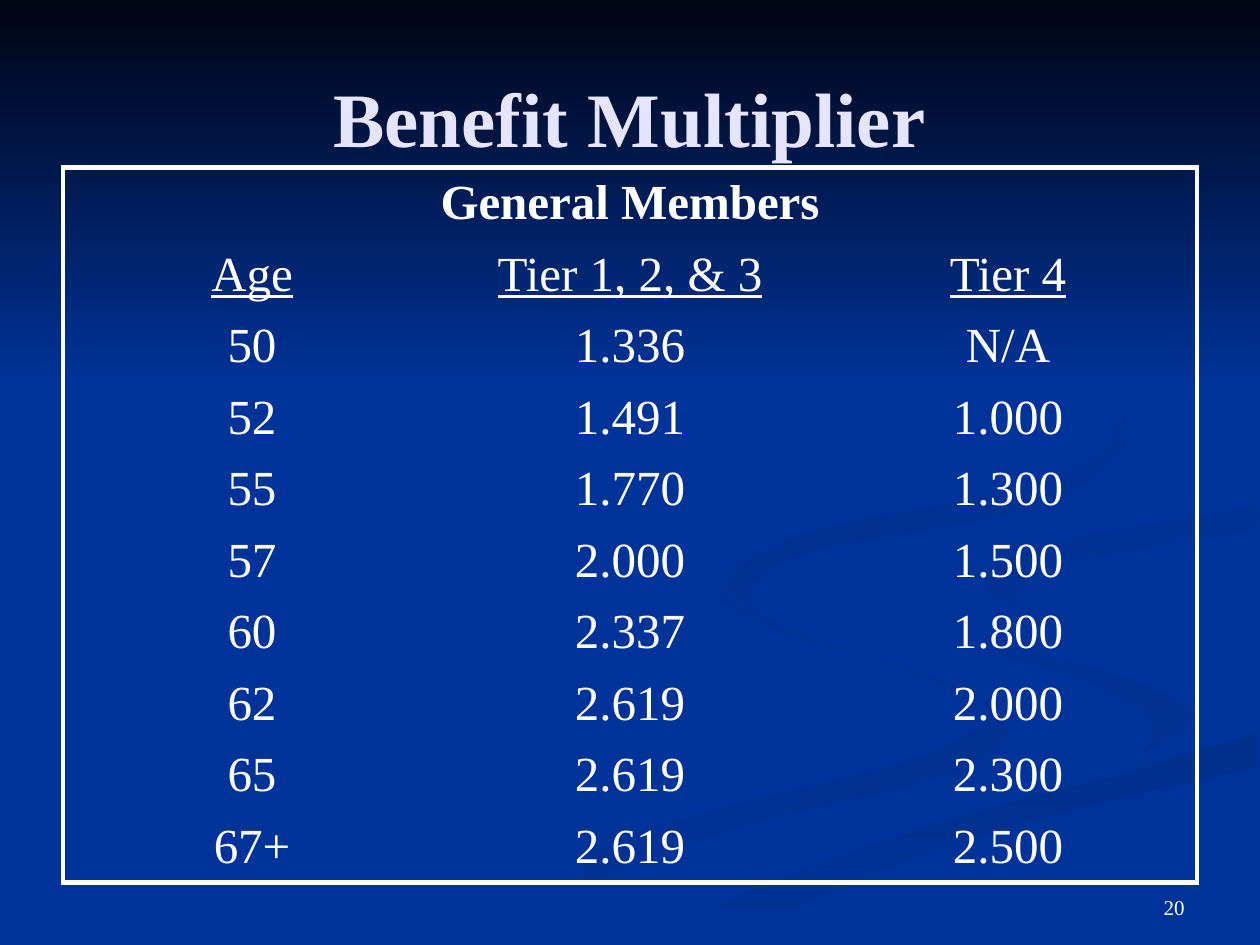
"""Build the Benefit Multiplier slide."""

from lxml.etree import SubElement
from pptx import Presentation
from pptx.dml.color import RGBColor as Rgb
from pptx.enum.text import MSO_ANCHOR as Anchor, PP_ALIGN as Align
from pptx.oxml.ns import qn
from pptx.util import Pt

UNIT = 9144
COLUMNS, ROWS = 1000, 750
STEPS = 5
FONT = "Times New Roman"
NO_STYLE = "{2D5ABB26-0587-4C30-8999-92F81FD0307C}"
COLORS = {
    "blue": "003399", "night": "000514", "white": "FFFFFF", "title": "E5E5FF",
    "shade": "003193", "deep": "002F8C", "bend": "003091", "curl": "002F8E",
}
CURVES = {
    "stream": [(575, 459), (583, 477), (642, 507), (757, 543), (800, 581),
               (756, 614), (623, 647), (499, 687), (361, 749)],
    "stream inner": [(575, 459), (572, 476), (611, 499), (728, 535), (785, 566),
                     (727, 602), (579, 639), (417, 690), (300, 749)],
    "swirl": [(724, 464), (758, 498), (870, 530), (930, 553), (943, 575), (894, 605)],
    "swirl inner": [(724, 464), (755, 505), (854, 539), (911, 567), (911, 593), (894, 605)],
    "slope": [(894, 605), (743, 643), (573, 703), (477, 749)],
    "tail": [(503, 749), (630, 693), (765, 647), (904, 610), (998, 581)],
    "tail inner": [(571, 749), (695, 692), (821, 651), (998, 609)],
    "shoulder": [(998, 538), (904, 519), (826, 496)],
    "hook": [(826, 496), (781, 463), (822, 434), (899, 418), (998, 402)],
    "hook inner": [(826, 496), (805, 472), (843, 448), (998, 420)],
    "crest": [(998, 387), (851, 411), (755, 432), (724, 464)],
    "curl": [(762, 233), (843, 275), (894, 344), (825, 402), (649, 436), (593, 470), (622, 500)],
    "curl inner": [(762, 233), (846, 279), (889, 335), (818, 386), (649, 420), (577, 462),
                   (622, 500)],
}
RIBBONS = [
    ("stream", "blue", "shade", 0), ("swirl", "blue", "shade", 45),
    ("tail", "deep", "blue", 90), ("cover", "blue", "blue", 0),
    ("hook", "bend", "blue", 45), ("curl", "curl", "blue", 45),
]
COVER = ["swirl", "slope", "tail", "shoulder", "hook", "crest"]
BENEFITS = [
    ("General Members", "", ""), ("Age", "Tier 1, 2, & 3", "Tier 4"),
    ("50", "1.336", "N/A"), ("52", "1.491", "1.000"),
    ("55", "1.770", "1.300"), ("57", "2.000", "1.500"),
    ("60", "2.337", "1.800"), ("62", "2.619", "2.000"),
    ("65", "2.619", "2.300"), ("67+", "2.619", "2.500"),
]


def color(name):
    """Return the named colour."""
    return Rgb.from_string(COLORS[name])


def scaled(box):
    """Turn grid columns and rows into slide lengths."""
    return [value * UNIT for value in box]


def smooth(name):
    """Run a Catmull-Rom curve through the points of the named curve."""
    knots = CURVES[name]
    padded = [knots[0], *knots, knots[-1]]
    points = []
    for quad in zip(padded, padded[1:], padded[2:], padded[3:]):
        for step in range(STEPS):
            t = step / STEPS
            points.append(tuple(
                b + t * (c - a + t * (2 * a - 5 * b + 4 * c - d + t * (3 * b - a - 3 * c + d))) / 2
                for a, b, c, d in zip(*quad)))
    return points + [knots[-1]]


def ribbon_outline(name):
    """Join the curves that bound a ribbon."""
    if name == "cover":
        return [point for part in COVER for point in smooth(part)]
    return smooth(name) + smooth(f"{name} inner")[::-1]


def style_text(text_frame, size, name="white", align=Align.CENTER, bold=False, underline=False):
    """Format every run of a text frame."""
    for paragraph in text_frame.paragraphs:
        paragraph.alignment = align
        for run in paragraph.runs:
            font = run.font
            font.name, font.size = FONT, Pt(size)
            font.bold, font.underline = bold, underline
            font.color.rgb = color(name)


def add_gradient_shape(slide, box, outline, stops, angle):
    """Draw an outline, given in grid cells, inside the box with a gradient fill."""
    left, top, width, height = box
    points = [(left + x * width / COLUMNS, top + y * height / ROWS) for x, y in outline]
    builder = slide.shapes.build_freeform(*points[0], scale=UNIT)
    builder.add_line_segments(points[1:], close=True)
    shape = builder.convert_to_shape()
    shape.shadow.inherit = False
    shape.line.fill.background()
    shape.fill.gradient()
    shape.fill.gradient_angle = -angle % 360
    for stop, name in zip(shape.fill.gradient_stops, stops):
        stop.color.rgb = color(name)


def add_backdrop(slide, box):
    """Paint the background, the ribbons and the dark upper band inside the box."""
    slide.background.fill.solid()
    slide.background.fill.fore_color.rgb = color("blue")
    for name, first, last, angle in RIBBONS:
        add_gradient_shape(slide, box, ribbon_outline(name), (first, last), angle)
    band = [(0, 0), (0, 308), (COLUMNS, 308), (COLUMNS, 0)]
    add_gradient_shape(slide, box, band, ("night", "blue"), 90)


def add_label(slide, box, text, anchor, size, **style):
    """Place a line of text in the box."""
    text_frame = slide.shapes.add_textbox(*scaled(box)).text_frame
    text_frame.word_wrap = True
    text_frame.vertical_anchor = anchor
    text_frame.text = text
    style_text(text_frame, size, **style)


def add_border(cell, sides):
    """Draw a white line on the given sides of a cell."""
    properties = cell._tc.get_or_add_tcPr()
    for side in sides:
        line = SubElement(properties, qn(f"a:ln{side}"), w=str(Pt(3)))
        fill = SubElement(line, qn("a:solidFill"))
        SubElement(fill, qn("a:srgbClr"), val=COLORS["white"])


def add_benefit_table(slide, box):
    """Place the framed table of multipliers in the box."""
    last_row, last_column = len(BENEFITS) - 1, len(BENEFITS[0]) - 1
    frame = slide.shapes.add_table(last_row + 1, last_column + 1, *scaled(box))
    table = frame.table
    table.first_row = table.horz_banding = False
    table._tbl.tblPr.find(qn("a:tableStyleId")).text = NO_STYLE
    table.cell(0, 0).merge(table.cell(0, last_column))
    for row, texts in enumerate(BENEFITS):
        for column, text in enumerate(texts):
            cell = table.cell(row, column)
            edges = {"L": column == 0, "R": column == last_column or row == 0,
                     "T": row == 0, "B": row == last_row}
            add_border(cell, [side for side, outer in edges.items() if outer])
            cell.fill.background()
            cell.vertical_anchor = Anchor.MIDDLE
            cell.text_frame.text = text
            style_text(cell.text_frame, 28, bold=row == 0, underline=row == 1)


def main():
    """Build and save the presentation."""
    presentation = Presentation()
    presentation.slide_width, presentation.slide_height = scaled((COLUMNS, ROWS))
    slide = presentation.slides.add_slide(presentation.slide_layouts[6])
    add_backdrop(slide, (0, 0, COLUMNS, ROWS))
    add_label(slide, (717, 683, 233, 52), "20", Anchor.BOTTOM, 12, align=Align.RIGHT)
    add_label(slide, (50, 30, 900, 125), "Benefit Multiplier", Anchor.MIDDLE, 44,
              name="title", bold=True)
    add_benefit_table(slide, (50, 133, 900, 550))
    presentation.save("out.pptx")


if __name__ == "__main__":
    main()
